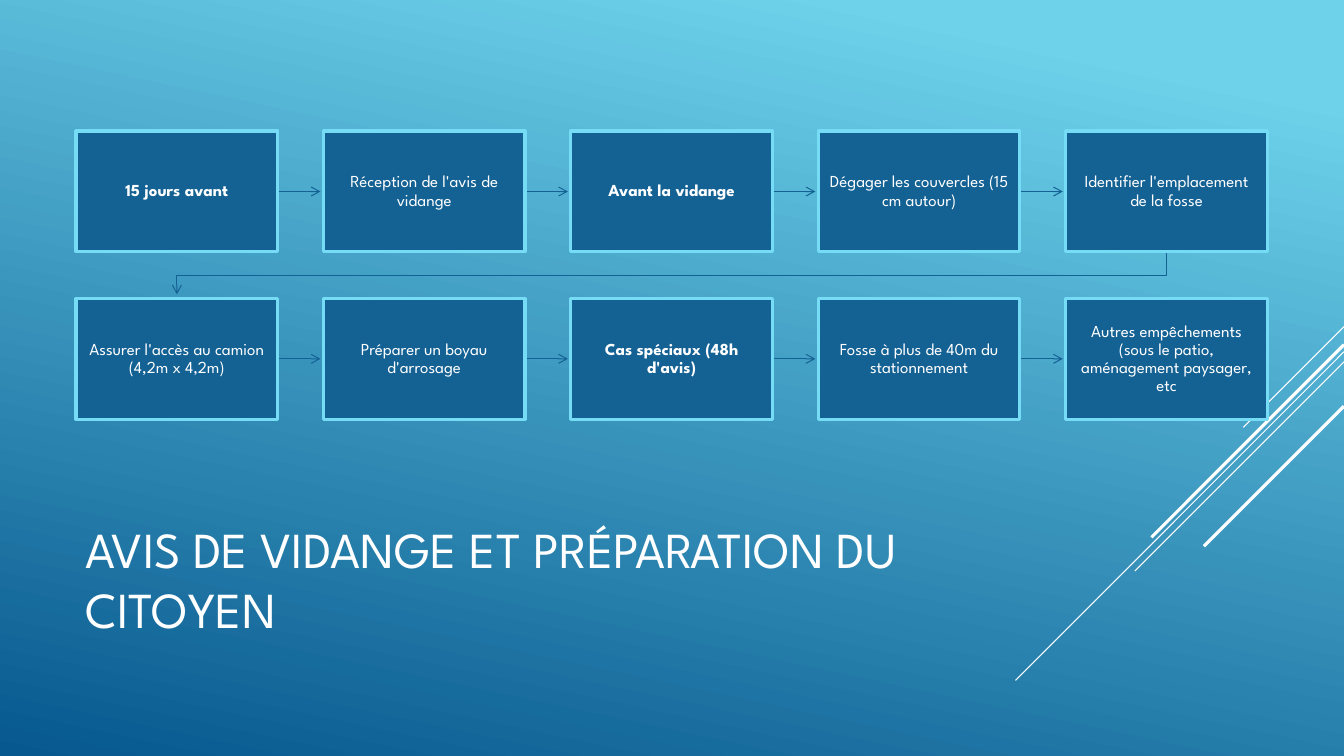
from dataclasses import dataclass

from lxml.etree import SubElement
from pptx import Presentation
from pptx.dml.color import RGBColor
from pptx.enum.shapes import MSO_CONNECTOR, MSO_SHAPE
from pptx.enum.text import MSO_ANCHOR, PP_ALIGN
from pptx.oxml.ns import qn
from pptx.util import Emu, Pt

EMU_PER_PX = 4572  # 200 px to the inch


@dataclass(frozen=True)
class Theme:
    font: str = "League Spartan"
    title_size: int = 36
    step_size: int = 12
    thin: float = 0.75
    thick: float = 2.25
    sky: str = "6ED2EB"
    deep: str = "06588E"
    step_fill: str = "146194"
    step_border: str = "76DBF4"
    white: str = "FFFFFF"


THEME = Theme()

# Step grid
COLUMNS = 5
LEFT, TOP = 151, 260
STEP_WIDTH, STEP_HEIGHT = 400, 240
COLUMN_PITCH, ROW_PITCH = 491, 332
ARROW_LENGTH = 85

# Wording and whether it is a stage heading
STEPS = [
    ("15 jours avant", True),
    ("Réception de l'avis de vidange", False),
    ("Avant la vidange", True),
    ("Dégager les couvercles (15 cm autour)", False),
    ("Identifier l'emplacement de la fosse", False),
    ("Assurer l'accès au camion (4,2m x 4,2m)", False),
    ("Préparer un boyau d'arrosage", False),
    ("Cas spéciaux (48h d'avis)", True),
    ("Fosse à plus de 40m du stationnement", False),
    ("Autres empêchements (sous le patio, aménagement paysager, etc", False),
]

# Diagonal rays: y at the right edge, horizontal run, weight
RAYS = [
    (648, 200, THEME.thin),
    (698, 652, THEME.thin),
    (718, 415, THEME.thin),
    (684, 382, THEME.thick),
    (806, 278, THEME.thick),
]
SLIDE_WIDTH, SLIDE_HEIGHT = 2667, 1500


def px(length):
    return Emu(length * EMU_PER_PX)


def box(*lengths):
    return [px(length) for length in lengths]


def color(value):
    return RGBColor.from_string(value)


def style_line(line, value, weight):
    line.color.rgb = color(value)
    line.width = Pt(weight)


def add_arrowhead(arrow):
    SubElement(arrow.get_or_add_ln(), qn("a:tailEnd"), type="arrow")


def set_text(frame, text, size, bold=False, align=PP_ALIGN.LEFT, spacing=1.0):
    frame.word_wrap = True
    frame.vertical_anchor = MSO_ANCHOR.MIDDLE
    paragraph = frame.paragraphs[0]
    paragraph.text = text
    paragraph.alignment = align
    paragraph.line_spacing = spacing
    paragraph.font.name = THEME.font
    paragraph.font.size = Pt(size)
    paragraph.font.bold = bold
    paragraph.font.color.rgb = color(THEME.white)


def paint_background(slide):
    fill = slide.background.fill
    fill.gradient()
    fill.gradient_angle = 258
    for stop, value, position in zip(
        fill.gradient_stops, (THEME.sky, THEME.deep), (0.1, 1.0)
    ):
        stop.color.rgb = color(value)
        stop.position = position


def add_straight(slide, x1, y1, x2, y2, value, weight):
    straight = slide.shapes.add_connector(
        MSO_CONNECTOR.STRAIGHT, *box(x1, y1, x2, y2)
    )
    style_line(straight.line, value, weight)
    SubElement(straight.element.spPr, qn("a:effectLst"))
    return straight


def add_row_return(slide, start_x, end_x, top):
    bend, tip = top + 46, top + 84
    builder = slide.shapes.build_freeform(start_x, top, scale=EMU_PER_PX)
    builder.add_line_segments(
        [(start_x, bend), (end_x, bend), (end_x, tip)], close=False
    )
    row_return = builder.convert_to_shape()
    row_return.shadow.inherit = False
    row_return.fill.background()
    style_line(row_return.line, THEME.step_fill, THEME.thin)
    add_arrowhead(row_return)


def add_step(slide, x, y, text, heading):
    step = slide.shapes.add_shape(
        MSO_SHAPE.RECTANGLE, *box(x, y, STEP_WIDTH, STEP_HEIGHT)
    )
    step.shadow.inherit = False
    step.fill.solid()
    step.fill.fore_color.rgb = color(THEME.step_fill)
    style_line(step.line, THEME.step_border, THEME.thick)
    frame = step.text_frame
    frame.margin_left = frame.margin_right = px(20)
    frame.margin_top = frame.margin_bottom = px(20)
    set_text(frame, text, THEME.step_size, heading, PP_ALIGN.CENTER, 0.9)


def add_process(slide):
    for index, (text, heading) in enumerate(STEPS):
        row, column = divmod(index, COLUMNS)
        x = LEFT + column * COLUMN_PITCH
        y = TOP + row * ROW_PITCH
        # Link to the next step: along the row, or back to the next row
        if column < COLUMNS - 1:
            start, middle = x + STEP_WIDTH, y + STEP_HEIGHT // 2
            add_arrowhead(add_straight(
                slide, start, middle, start + ARROW_LENGTH, middle,
                THEME.step_fill, THEME.thin,
            ))
        elif index < len(STEPS) - 1:
            half = STEP_WIDTH // 2
            add_row_return(slide, x + half, LEFT + half, y + STEP_HEIGHT)
        add_step(slide, x, y, text, heading)


def main():
    presentation = Presentation()
    presentation.slide_width = px(SLIDE_WIDTH)
    presentation.slide_height = px(SLIDE_HEIGHT)
    slide = presentation.slides.add_slide(presentation.slide_layouts[6])

    # Backdrop
    paint_background(slide)
    for edge_y, run, weight in RAYS:
        add_straight(slide, SLIDE_WIDTH, edge_y, SLIDE_WIDTH - run,
                     edge_y + run, THEME.white, weight)

    # Title
    title = slide.shapes.add_textbox(*box(150, 982, 1866, 330))
    set_text(title.text_frame, "AVIS DE VIDANGE ET PRÉPARATION DU CITOYEN",
             THEME.title_size)

    # Process steps
    add_process(slide)
    presentation.save("out.pptx")


if __name__ == "__main__":
    main()
